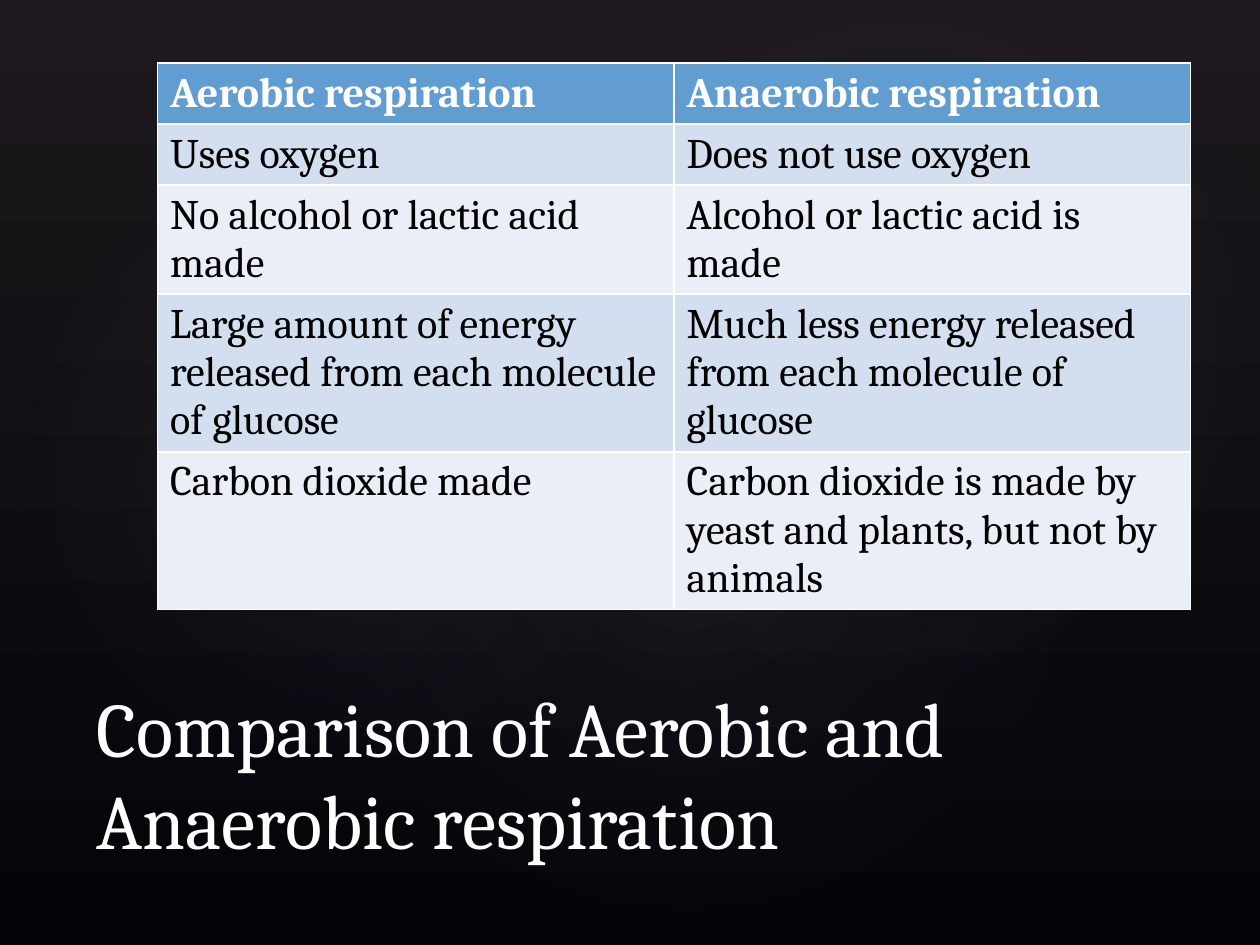
from lxml.etree import SubElement
from pptx import Presentation
from pptx.dml.color import RGBColor
from pptx.enum.shapes import MSO_SHAPE
from pptx.enum.text import MSO_ANCHOR, MSO_AUTO_SIZE, PP_ALIGN
from pptx.oxml.ns import qn
from pptx.util import Pt

FONT = "Cambria"
COLORS = {
    "top": "1D191E", "bottom": "040408", "glow": "C4BCC6", "glow_edge": "242852",
    "white": "FFFFFF", "black": "000000", "header": "629DD1",
    "odd_row": "D3DFEE", "even_row": "EAEFF7",
}
GLOWS = [
    ((108, 82, 570, 449), 328.7, 7),
    ((-22, 92, 436, 353), 294.3, 8),
    ((258, 9, 510, 374), 328.7, 8),
]
ROWS = [
    ("Aerobic respiration", "Anaerobic respiration"),
    ("Uses oxygen", "Does not use oxygen"),
    ("No alcohol or lactic acid made", "Alcohol or lactic acid is made"),
    ("Large amount of energy released from each molecule of glucose",
     "Much less energy released from each molecule of glucose"),
    ("Carbon dioxide made",
     "Carbon dioxide is made by yeast and plants, but not by animals"),
]
LINES_PER_ROW = [1, 1, 2, 3, 3]
LINE_HEIGHT, CELL_PADDING = 27.6, 7.2


def color(name):
    """Return the named colour."""
    return RGBColor.from_string(COLORS[name])


def format_text(text_frame, size, color_name, bold=False):
    """Apply the slide font to every run."""
    for paragraph in text_frame.paragraphs:
        for run in paragraph.runs:
            run.font.name = FONT
            run.font.size = Pt(size)
            run.font.bold = bold
            run.font.color.rgb = color(color_name)


def set_background(slide):
    """Fill the background from dark grey down to near black."""
    fill = slide.background.fill
    fill.gradient()
    fill.gradient_angle = 270
    for stop, name in zip(fill.gradient_stops, ("top", "bottom")):
        stop.color.rgb = color(name)
    fill.gradient_stops[0].position = 0
    fill.gradient_stops[1].position = 1


def add_glow(slide, box, rotation, opacity):
    """Add a soft ellipse that fades out from its centre."""
    shape = slide.shapes.add_shape(MSO_SHAPE.OVAL, *map(Pt, box))
    shape.rotation = rotation
    shape.shadow.inherit = False
    shape.line.fill.background()
    shape.fill.gradient()
    stops = shape.fill.gradient_stops
    for stop, name, position, alpha in zip(
            stops, ("glow", "glow_edge"), (0, 0.58), (opacity, 0)):
        stop.color.rgb = color(name)
        stop.position = position
    gradient = shape.element.spPr.find(qn("a:gradFill"))
    for element, alpha in zip(gradient.iter(qn("a:srgbClr")), (opacity, 0)):
        SubElement(element, qn("a:alpha"), val=str(alpha * 1000))
    gradient.remove(gradient.find(qn("a:lin")))
    radial = SubElement(gradient, qn("a:path"), path="circle")
    SubElement(radial, qn("a:fillToRect"),
               {side: "50000" for side in ("l", "t", "r", "b")})


def place_title(slide, box):
    """Place the title in front of the glows."""
    title = slide.shapes.title
    title.left, title.top, title.width, title.height = map(Pt, box)
    text_frame = title.text_frame
    text_frame.text = "Comparison of Aerobic and Anaerobic respiration"
    text_frame.word_wrap = True
    text_frame.auto_size = MSO_AUTO_SIZE.NONE
    text_frame.vertical_anchor = MSO_ANCHOR.BOTTOM
    text_frame.paragraphs[0].alignment = PP_ALIGN.LEFT
    format_text(text_frame, 44, "white")
    title.element.getparent().append(title.element)


def add_comparison_table(slide, left, top, width):
    """Add the two-column table with rows as tall as their text."""
    heights = [LINE_HEIGHT * lines + CELL_PADDING for lines in LINES_PER_ROW]
    table = slide.shapes.add_table(
        len(ROWS), 2, Pt(left), Pt(top), Pt(width), Pt(sum(heights))).table
    for index, (texts, height) in enumerate(zip(ROWS, heights)):
        is_header = index == 0
        band = "header" if is_header else "odd_row" if index % 2 else "even_row"
        table.rows[index].height = Pt(height)
        for cell, text in zip(table.rows[index].cells, texts):
            cell.fill.solid()
            cell.fill.fore_color.rgb = color(band)
            cell.text_frame.text = text
            format_text(cell.text_frame, 24,
                        "white" if is_header else "black", is_header)


def main():
    """Build and save the slide."""
    presentation = Presentation()
    presentation.slide_width, presentation.slide_height = Pt(720), Pt(540)
    slide = presentation.slides.add_slide(presentation.slide_layouts[5])
    set_background(slide)
    for box, rotation, opacity in GLOWS:
        add_glow(slide, box, rotation, opacity)
    place_title(slide, (48, 426, 594, 72))
    add_comparison_table(slide, 90, 36, 590.4)
    presentation.save("out.pptx")


if __name__ == "__main__":
    main()
